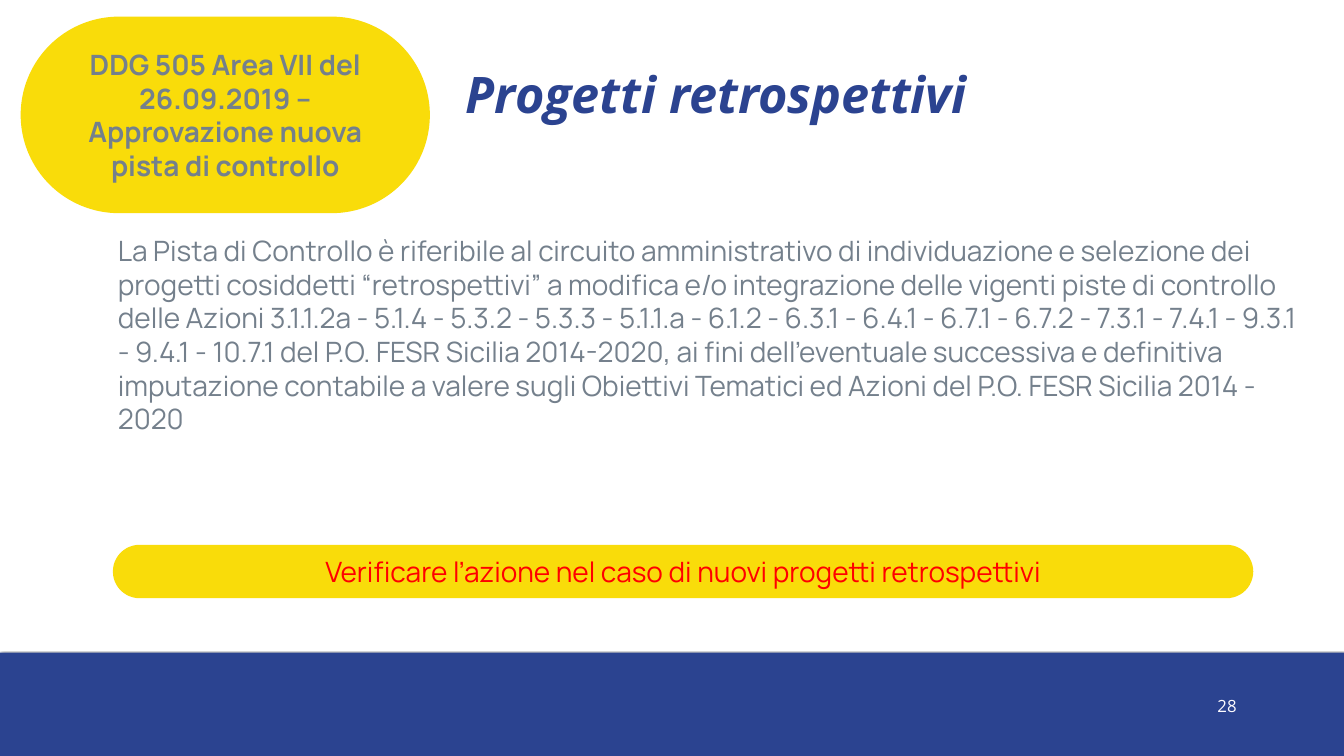
from lxml import etree
from pptx import Presentation
from pptx.dml.color import RGBColor
from pptx.enum.shapes import MSO_SHAPE as Shape
from pptx.enum.text import MSO_ANCHOR as Anchor, MSO_AUTO_SIZE as AutoSize, PP_ALIGN as Align
from pptx.oxml import parse_xml
from pptx.util import Pt

PX = 9144
WIDTH, HEIGHT = 2667, 1500
BLUE = RGBColor(0x2B, 0x43, 0x90)
YELLOW = RGBColor(0xF9, 0xDC, 0x0A)
GREY = RGBColor(0x74, 0x80, 0x8C)
RED = RGBColor(0xFF, 0x00, 0x00)
WHITE = RGBColor(0xFE, 0xFC, 0xFF)

TITLE = "Progetti retrospettivi"
TITLE_BOX = (525, 119, 1793, 131)
BODY = (
    "La Pista di Controllo è riferibile al circuito amministrativo di individuazione e selezione dei "
    "progetti cosiddetti “retrospettivi” a modifica e/o integrazione delle vigenti piste di controllo "
    "delle Azioni 3.1.1.2a - 5.1.4 - 5.3.2 - 5.3.3 - 5.1.1.a - 6.1.2 - 6.3.1 - 6.4.1 - 6.7.1 - 6.7.2 - "
    "7.3.1 - 7.4.1 - 9.3.1 - 9.4.1 - 10.7.1 del P.O. FESR Sicilia 2014-2020, ai fini dell’eventuale "
    "successiva e definitiva imputazione contabile a valere sugli Obiettivi Tematici ed Azioni del "
    "P.O. FESR Sicilia 2014 - 2020"
)
BODY_BOX = (224, 459, 2386, 414)
PAGE_NUMBER = "28"
PAGE_NUMBER_BOX = (2386, 1377, 98, 53)
FOOTER_BOX = (0, 1295, WIDTH, HEIGHT - 1295)
PILLS = [
    ("DDG 505 Area VII del 26.09.2019 – Approvazione nuova pista di controllo",
     (41, 33, 812, 390), GREY, True),
    ("Verificare l’azione nel caso di nuovi progetti retrospettivi",
     (224, 1081, 2263, 106), RED, False),
]
FOOTER_SHADOW = (
    '<a:effectLst xmlns:a="http://schemas.openxmlformats.org/drawingml/2006/main">'
    '<a:outerShdw blurRad="25400" dist="0" dir="0"><a:srgbClr val="000000">'
    '<a:alpha val="50000"/></a:srgbClr></a:outerShdw></a:effectLst>'
)


def emu(box):
    return [value * PX for value in box]


def write(holder, text, size, face, color, align=Align.LEFT, anchor=Anchor.TOP,
          inset=None, bold=False, italic=False):
    frame = holder.text_frame
    frame.word_wrap = True
    frame.auto_size = AutoSize.NONE
    frame.vertical_anchor = anchor
    if inset is not None:
        frame.margin_left = frame.margin_right = inset * PX
        frame.margin_top = frame.margin_bottom = inset * PX
    paragraph = frame.paragraphs[0]
    paragraph.alignment = align
    run = paragraph.add_run()
    run.text = text
    font = run.font
    font.size, font.name, font.bold, font.italic = Pt(size), face, bold, italic
    font.color.rgb = color


def add_filled(slide, preset, box, color):
    shape = slide.shapes.add_shape(preset, *emu(box))
    shape.fill.solid()
    shape.fill.fore_color.rgb = color
    shape.line.fill.background()
    return shape


def main():
    deck = Presentation()
    deck.slide_width, deck.slide_height = WIDTH * PX, HEIGHT * PX
    slide = deck.slides.add_slide(deck.slide_layouts[5])

    footer = add_filled(slide, Shape.RECTANGLE, FOOTER_BOX, BLUE)
    footer._element.spPr.append(parse_xml(FOOTER_SHADOW))

    page_number = slide.shapes.add_textbox(*emu(PAGE_NUMBER_BOX))
    write(page_number, PAGE_NUMBER, 24, "Open Sans", WHITE, Align.CENTER, inset=4)

    body = slide.shapes.add_textbox(*emu(BODY_BOX))
    write(body, BODY, 40, "Manrope", GREY)

    title = slide.shapes.title
    title.left, title.top, title.width, title.height = emu(TITLE_BOX)
    write(title, TITLE, 72, "Open Sans", BLUE, Align.CENTER, Anchor.MIDDLE,
          bold=True, italic=True)

    for text, box, color, bold in PILLS:
        pill = add_filled(slide, Shape.ROUNDED_RECTANGLE, box, YELLOW)
        pill.adjustments[0] = 0.5
        pill.shadow.inherit = False
        write(pill, text, 40, "Manrope", color, Align.CENTER, Anchor.MIDDLE,
              inset=4, bold=bold)

    deck.save("out.pptx")


if __name__ == "__main__":
    main()
